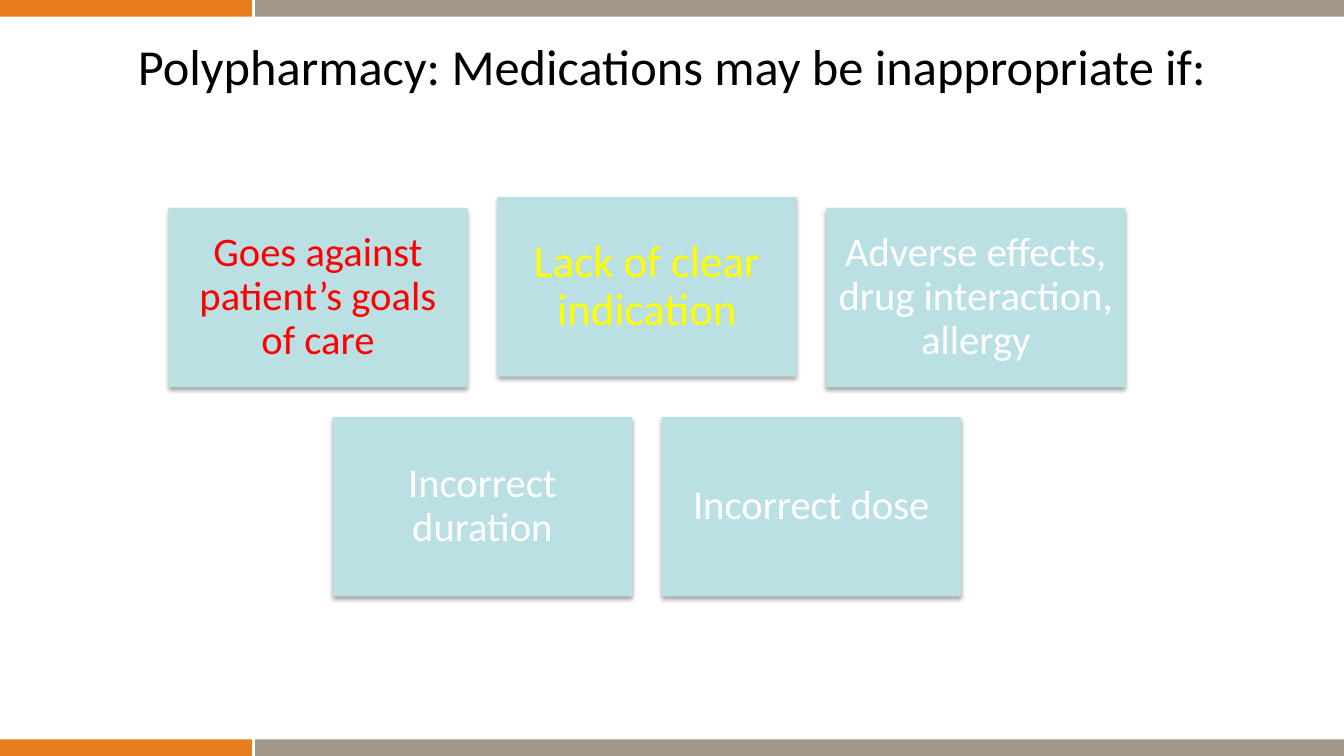
from lxml import etree
from pptx import Presentation
from pptx.dml.color import RGBColor
from pptx.enum.shapes import MSO_SHAPE
from pptx.enum.text import MSO_ANCHOR, PP_ALIGN
from pptx.oxml.ns import qn
from pptx.util import Cm, Pt

RECT = MSO_SHAPE.RECTANGLE
CENTER = PP_ALIGN.CENTER
TOP, MIDDLE = MSO_ANCHOR.TOP, MSO_ANCHOR.MIDDLE
FONT = "Calibri"
COLORS = {
    "orange": "E87D1E", "taupe": "A2988A", "card": "BBE0E3",
    "black": "000000", "red": "FF0000", "yellow": "FFFF00", "white": "FFFFFF",
}
WIDTH, HEIGHT = 33.87, 19.05
BAR_HEIGHT = 0.42
CARD_W, CARD_H, GAP = 7.54, 4.52, 0.75
ROWS = [
    [("Goes against patient’s goals of care", "red", 29, 0),
     ("Lack of clear indication", "yellow", 32, 0.27),
     ("Adverse effects, drug interaction, allergy", "white", 29, 0)],
    [("Incorrect duration", "white", 29, 0),
     ("Incorrect dose", "white", 29, 0)],
]


def rgb(name):
    return RGBColor.from_string(COLORS[name])


def add_rect(s, x, y, w, h, color):
    sp = s.shapes.add_shape(RECT, Cm(x), Cm(y), Cm(w), Cm(h))
    sp.fill.solid()
    sp.fill.fore_color.rgb = rgb(color)
    sp.line.fill.background()
    sp.shadow.inherit = False
    return sp


def add_shadow(sp):
    effects = sp._element.spPr.find(qn("a:effectLst"))
    shadow = etree.SubElement(effects, qn("a:outerShdw"), blurRad=str(Pt(3.1)),
                              dist=str(Pt(1.8)), dir="5400000", rotWithShape="0")
    color = etree.SubElement(shadow, qn("a:srgbClr"), val=COLORS["black"])
    etree.SubElement(color, qn("a:alpha"), val="35000")


def set_text(sp, text, color, size, anchor, spacing=1.0):
    tf = sp.text_frame
    tf.word_wrap = True
    tf.vertical_anchor = anchor
    p = tf.paragraphs[0]
    p.text = text
    p.alignment = CENTER
    p.line_spacing = spacing
    p.font.name = FONT
    p.font.size = Pt(size)
    p.font.color.rgb = rgb(color)
    return tf


def add_bar(s, x, y, w, h):
    split, gap = 6.35, 0.08
    parts = [(x, split, "orange"), (x + split + gap, w - split - gap, "taupe")]
    for left, width, color in parts:
        add_rect(s, left, y, width, h, color)


def add_title(s, x, y, w, h):
    sp = s.shapes.add_textbox(Cm(x), Cm(y), Cm(w), Cm(h))
    set_text(sp, "Polypharmacy: Medications may be inappropriate if:",
             "black", 36, TOP)


def add_cards(s, x, y, w):
    for i, row in enumerate(ROWS):
        row_width = len(row) * (CARD_W + GAP) - GAP
        left = x + (w - row_width) / 2
        top = y + i * (CARD_H + GAP)
        for j, (text, color, size, lift) in enumerate(row):
            sp = add_rect(s, left + j * (CARD_W + GAP), top - lift,
                          CARD_W, CARD_H, "card")
            add_shadow(sp)
            tf = set_text(sp, text, color, size, MIDDLE, 0.9)
            tf.margin_left = tf.margin_right = Cm(0.3)
            tf.margin_top = tf.margin_bottom = Cm(0.3)


def main():
    prs = Presentation()
    prs.slide_width, prs.slide_height = Cm(WIDTH), Cm(HEIGHT)
    s = prs.slides.add_slide(prs.slide_layouts[6])
    for y in (0, HEIGHT - BAR_HEIGHT):
        add_bar(s, 0, y, WIDTH, BAR_HEIGHT)
    add_title(s, 1.7, 0.76, 30.48, 3.18)
    add_cards(s, 4.24, 5.24, 24.13)
    prs.save("out.pptx")


if __name__ == "__main__":
    main()
